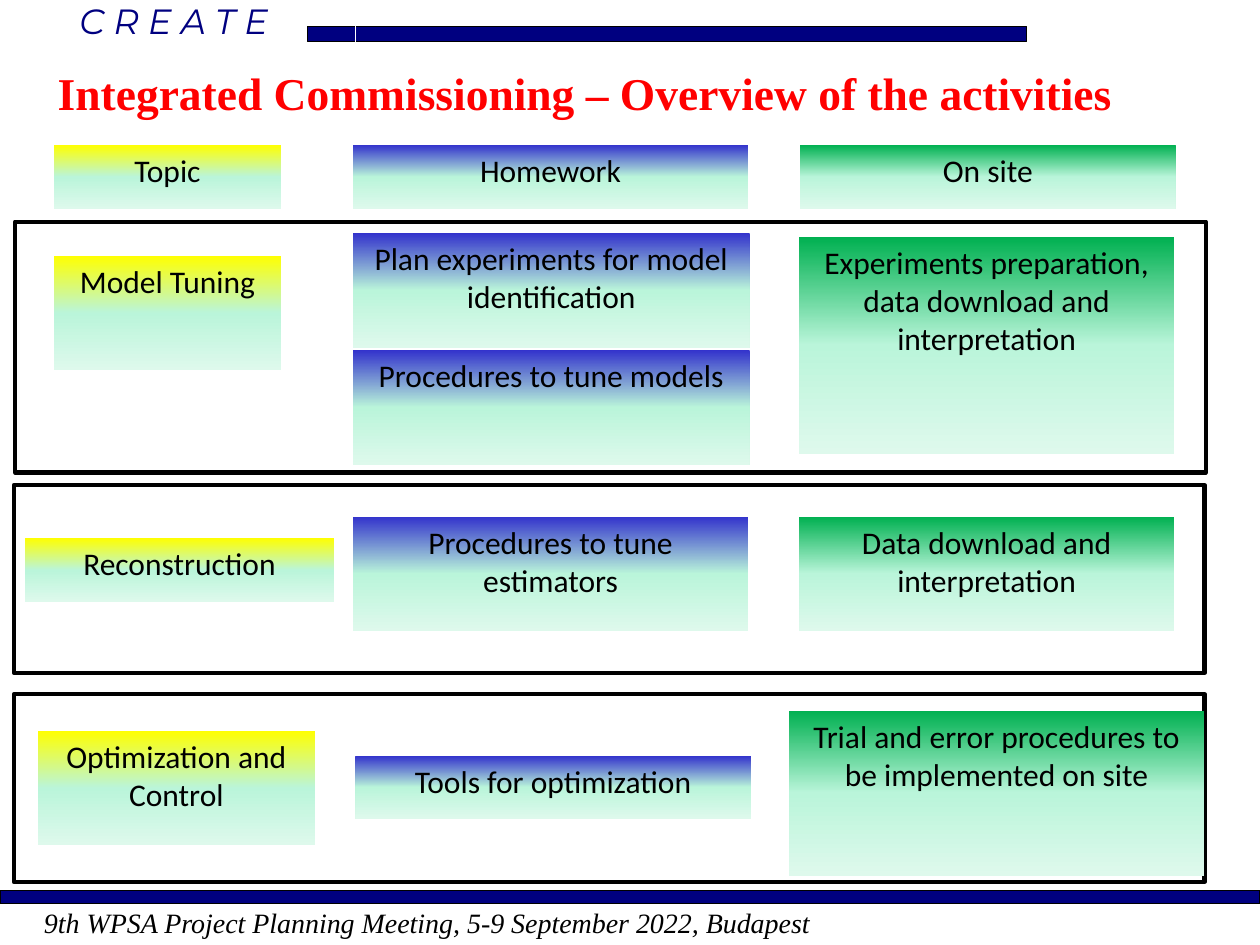
from copy import deepcopy
from dataclasses import dataclass

from pptx import Presentation
from pptx.dml.color import RGBColor
from pptx.enum.shapes import MSO_SHAPE as Shape
from pptx.enum.text import MSO_ANCHOR as Anchor, PP_ALIGN as Align
from pptx.oxml.ns import qn
from pptx.util import Inches, Pt


@dataclass(frozen=True)
class Theme:
    navy: str = "000080"
    black: str = "000000"
    red: str = "FF0000"
    topic: str = "FFFF00"
    homework: str = "3333CC"
    on_site: str = "00B050"
    fade: tuple = ("BAF5DA", "DEF9EC")
    body: str = "Calibri"
    serif: str = "Times New Roman"
    brand: str = "Montserrat"
    title_size: float = 26
    brand_size: float = 20
    body_size: float = 18
    footer_size: float = 16
    bar_line: float = 0.75
    frame_line: float = 2.5


T = Theme()

BARS = [(0, 7.07, 10, 0.1), (2.44, 0.21, 5.71, 0.12)]

FRAMES = [(0.12, 1.76, 9.45, 1.99), (0.11, 3.85, 9.45, 1.49), (0.11, 5.51, 9.45, 1.49)]

CARDS = {
    T.topic: [
        ("Topic", 0.43, 1.15, 1.8, 0.51),
        ("Model Tuning", 0.43, 2.03, 1.8, 0.91),
        ("Reconstruction", 0.2, 4.27, 2.45, 0.51),
        ("Optimization and Control", 0.3, 5.8, 2.2, 0.91),
    ],
    T.homework: [
        ("Homework", 2.8, 1.15, 3.14, 0.51),
        ("Plan experiments for model identification", 2.8, 1.85, 3.15, 0.91),
        ("Procedures to tune models", 2.8, 2.78, 3.15, 0.91),
        ("Procedures to tune estimators", 2.8, 4.1, 3.14, 0.91),
        ("Tools for optimization", 2.82, 6, 3.14, 0.5),
    ],
    T.on_site: [
        ("On site", 6.35, 1.15, 2.98, 0.51),
        ("Experiments preparation, data download and interpretation",
         6.34, 1.88, 2.98, 1.72),
        ("Data download and interpretation", 6.34, 4.1, 2.98, 0.91),
        ("Trial and error procedures to be implemented on site",
         6.26, 5.64, 3.3, 1.31),
    ],
}


def rgb(color):
    return RGBColor.from_string(color)


def write(tf, text, *, size=T.body_size, font=T.body, color=T.black,
          bold=False, italic=False, align=Align.LEFT):
    tf.word_wrap = True
    p = tf.paragraphs[0]
    p.alignment = align
    r = p.add_run()
    r.text = text
    r.font.name, r.font.size = font, Pt(size)
    r.font.bold, r.font.italic = bold, italic
    r.font.color.rgb = rgb(color)
    return p


def add_rect(slide, box, fill=None, line_width=None):
    s = slide.shapes.add_shape(Shape.RECTANGLE, *map(Inches, box))
    s.shadow.inherit = False
    if fill:
        s.fill.solid()
        s.fill.fore_color.rgb = rgb(fill)
    else:
        s.fill.background()
    if line_width:
        s.line.color.rgb = rgb(T.black)
        s.line.width = Pt(line_width)
    else:
        s.line.fill.background()
    return s


def add_card(slide, color, text, *box):
    s = add_rect(slide, box)
    s.fill.gradient()
    s.fill.gradient_angle = 270
    stops = s._element.spPr.find(".//" + qn("a:gsLst"))
    stops.append(deepcopy(stops[0]))
    for i, (stop, shade) in enumerate(zip(s.fill.gradient_stops, (color, *T.fade))):
        stop.color.rgb = rgb(shade)
        stop.position = i / 2
    s.text_frame.vertical_anchor = Anchor.TOP
    write(s.text_frame, text, align=Align.CENTER)


def add_text(slide, text, box, **style):
    s = slide.shapes.add_textbox(*map(Inches, box))
    return write(s.text_frame, text, **style)


def add_wordmark(slide):
    table = slide.shapes.add_table(1, 1, *map(Inches, (0.56, 0, 2.26, 0.33))).table
    table.first_row = table.horz_banding = False
    cell = table.cell(0, 0)
    cell.fill.background()
    cell.margin_left = cell.margin_right = Inches(0.07)
    cell.margin_top = cell.margin_bottom = 0
    write(cell.text_frame, "C R E A T E", size=T.brand_size, font=T.brand,
          color=T.navy, italic=True)


def add_title(slide):
    p = add_text(slide, "Integrated Commissioning – Overview of the activities",
                 (0.36, 0.47, 9.17, 0.71), size=T.title_size, font=T.serif,
                 color=T.red, bold=True)
    p.space_after = Pt(6)
    pPr = p._p.get_or_add_pPr()
    pPr.set("marL", str(Inches(0.38)))
    pPr.set("indent", str(-Inches(0.38)))


def main():
    prs = Presentation()
    prs.slide_width, prs.slide_height = Inches(10), Inches(7.5)
    slide = prs.slides.add_slide(prs.slide_layouts[6])
    for box in BARS:
        add_rect(slide, box, T.navy, T.bar_line)
    add_wordmark(slide)
    add_text(slide, "9th WPSA Project Planning Meeting, 5-9 September 2022, Budapest",
             (0.25, 7.14, 7.12, 0.37), size=T.footer_size, font=T.serif, italic=True)
    add_title(slide)
    for box in FRAMES:
        add_rect(slide, box, line_width=T.frame_line)
    for color, cards in CARDS.items():
        for card in cards:
            add_card(slide, color, *card)
    prs.save("out.pptx")


if __name__ == "__main__":
    main()
